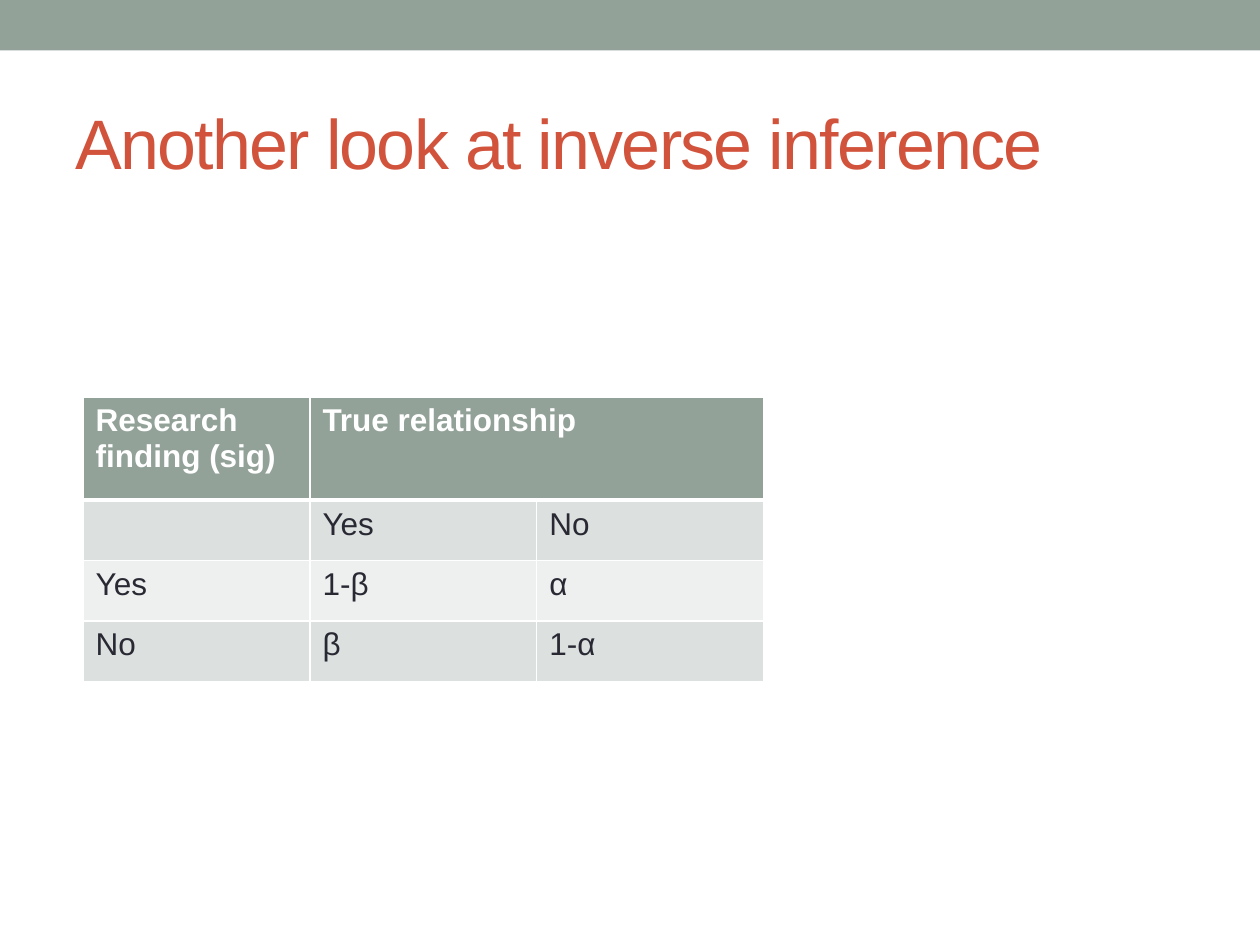
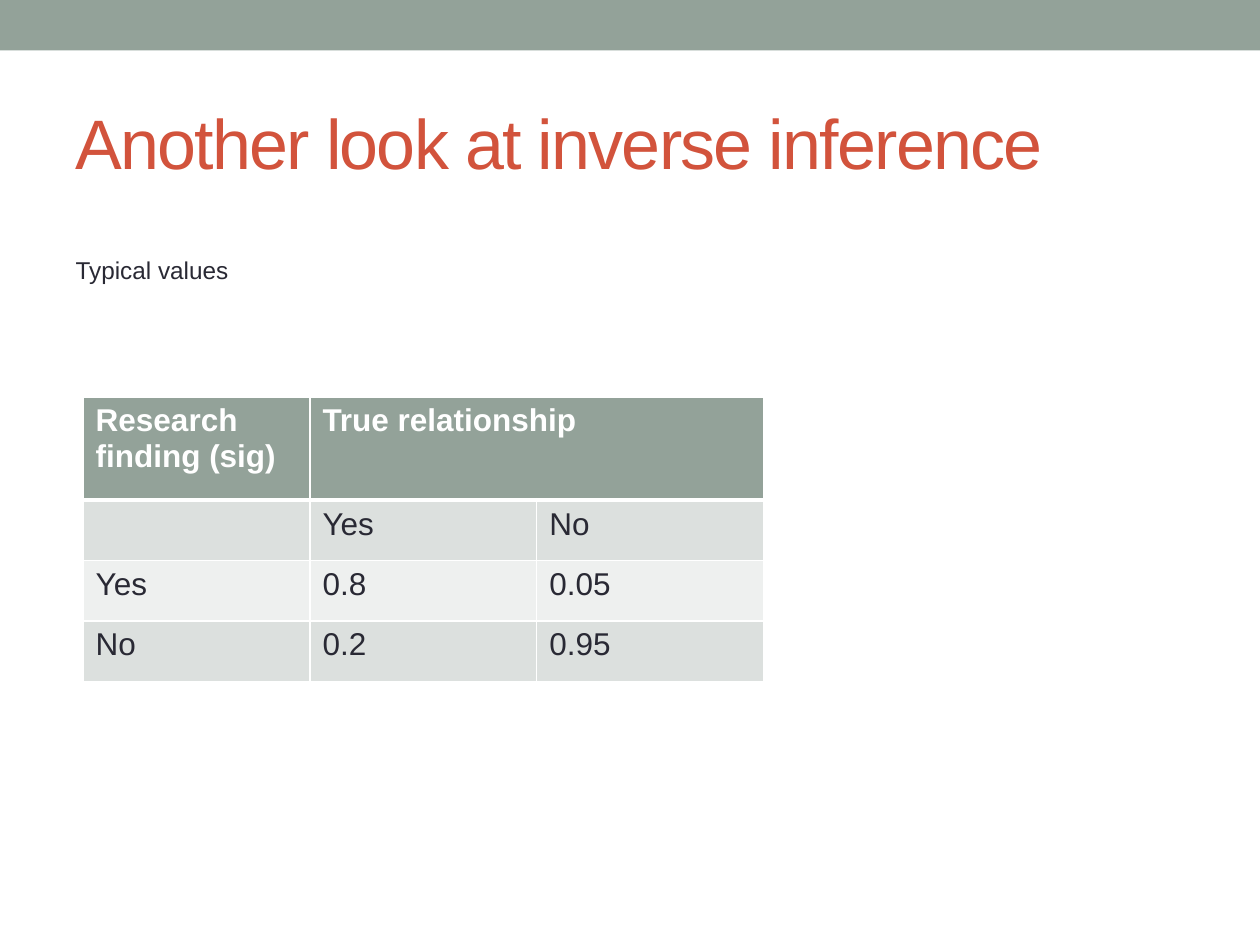
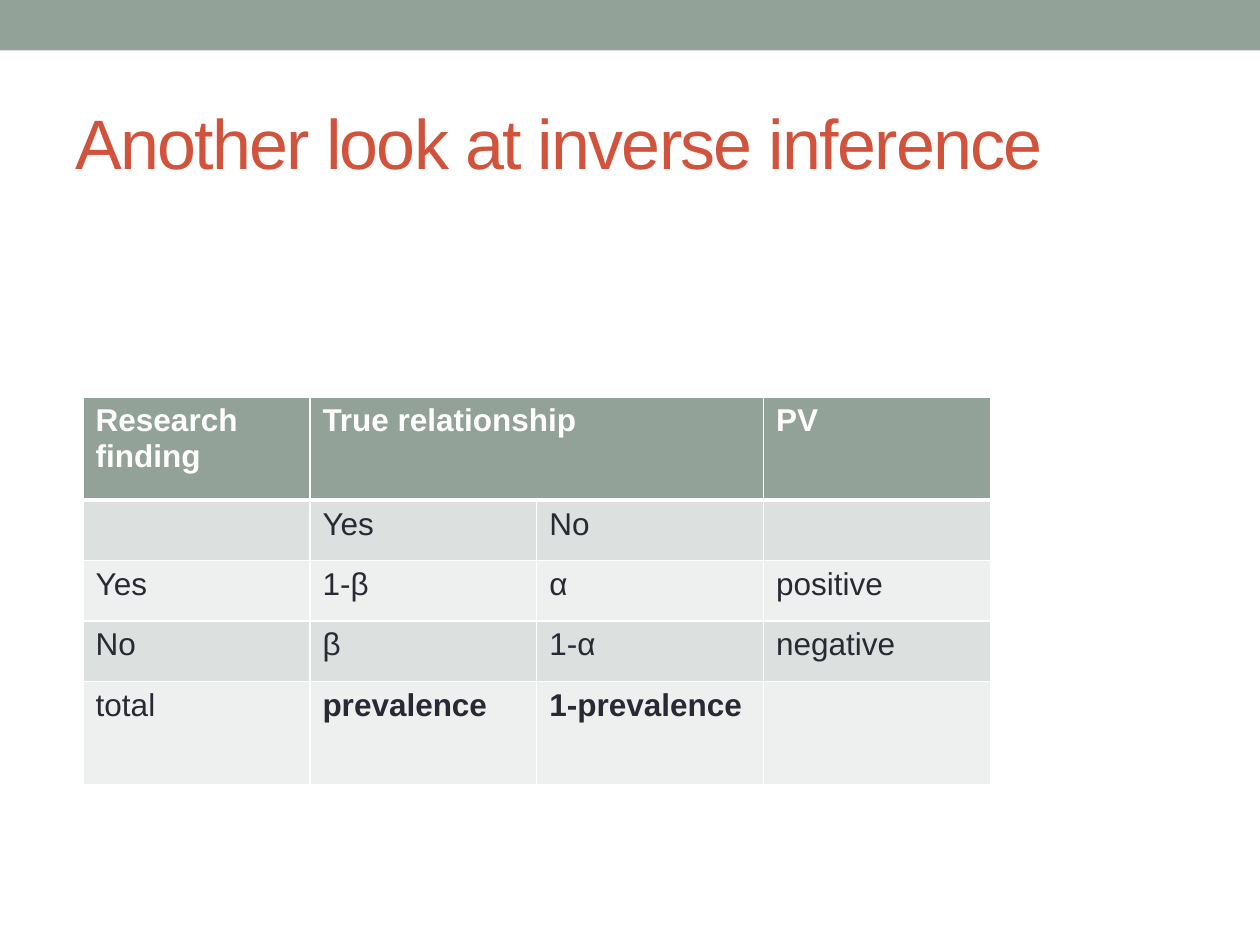
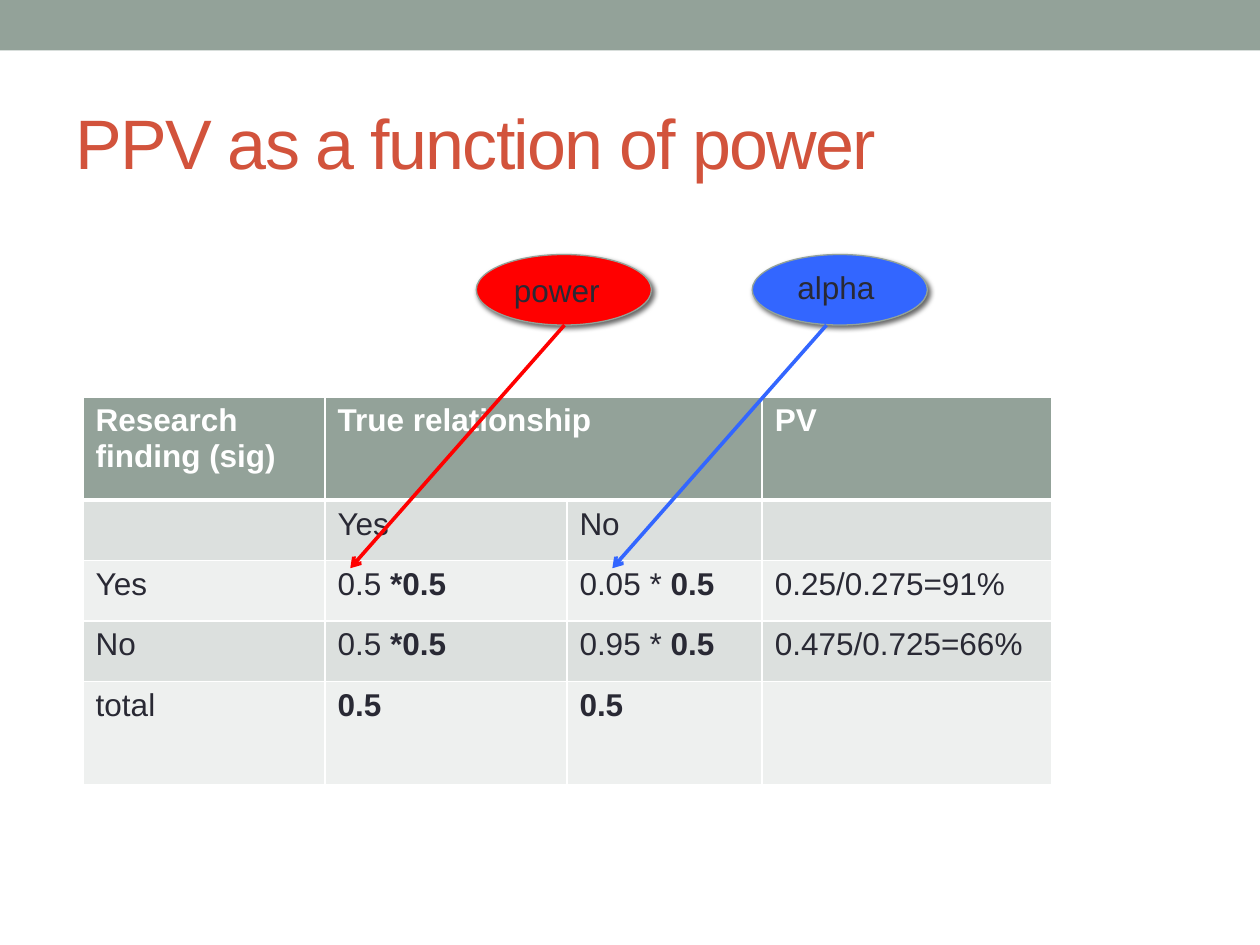
from lxml import etree
from pptx import Presentation
from pptx import util as u
from pptx.dml.color import RGBColor
from pptx.enum import shapes, text
from pptx.oxml.ns import qn

COLORS = {
    "sage": "93A299", "rust": "D2533C", "ink": "292934", "white": "FFFFFF",
    "band_dark": "DCE0DE", "band_light": "EEF0EF",
    "red": "FF0000", "blue": "3366FF", "black": "000000",
}
FONT = "Arial"
COLUMNS, ROWS = 20, 15
TITLE_ONLY, TITLE_AND_BODY = 5, 1
HEADER_ROW, DATA_ROW, TOTAL_ROW = 1.64, 0.96, 1.64
SIGNIFICANCE = "Research finding (sig)"
RELATION = "True relationship"


def rgb(name):
    return RGBColor.from_string(COLORS[name])


def sub(parent, tag, **attributes):
    return etree.SubElement(parent, qn(tag), {k: str(v) for k, v in attributes.items()})


def add_color(parent, name):
    return sub(parent, "a:srgbClr", val=COLORS[name])


def write(frame, content, size=18, color="ink", bold=False, align="LEFT",
          spacing=None, baseline=None):
    """Fill a text frame; each "|" in the content switches bold on or off."""
    paragraph = frame.paragraphs[0]
    paragraph.alignment = getattr(text.PP_ALIGN, align)
    for index, part in enumerate(content.split("|")):
        if not part:
            continue
        run = paragraph.add_run()
        run.text = part
        font = run.font
        font.name, font.size = FONT, u.Pt(size)
        font.bold = bold != (index % 2 == 1)
        font.color.rgb = rgb(color)
        properties = run._r.get_or_add_rPr()
        if spacing is not None:
            properties.set("spc", str(spacing * 100))
        if baseline is not None:
            properties.set("baseline", str(baseline * 1000))
    return paragraph


def set_borders(cell, **widths):
    """Draw white cell borders, given as L, R, T and B widths in points."""
    properties = cell._tc.get_or_add_tcPr()
    for side, width in widths.items():
        line = sub(properties, f"a:ln{side}", w=u.Pt(width))
        add_color(sub(line, "a:solidFill"), "white")


class Deck:
    """Holds the shared style and the slide being built; lengths are grid units."""

    def __init__(self):
        self.prs = Presentation()
        self.prs.slide_width, self.prs.slide_height = u.Inches(10), u.Inches(7.5)
        self.slide = None

    def x(self, columns):
        return round(self.prs.slide_width * columns / COLUMNS)

    def y(self, rows):
        return round(self.prs.slide_height * rows / ROWS)

    def box(self, left, top, width, height):
        return self.x(left), self.y(top), self.x(width), self.y(height)

    def place(self, shape, *area):
        shape.left, shape.top, shape.width, shape.height = self.box(*area)

    def add_slide(self, title, body=None):
        layout = TITLE_AND_BODY if body else TITLE_ONLY
        first = self.slide is None
        self.slide = self.prs.slides.add_slide(self.prs.slide_layouts[layout])
        if first:
            self.add_master_band()
        heading = self.slide.shapes.title
        self.place(heading, 1, 1.16, 18, 2.16)
        heading.text_frame.vertical_anchor = text.MSO_ANCHOR.MIDDLE
        write(heading.text_frame, title, size=40, color="rust", spacing=-1)
        if body:
            self.add_body(body)

    def add_master_band(self):
        """Draw the top band and move it to the master, behind every slide."""
        band = self.add_shape("RECTANGLE", "sage", 0, 0, COLUMNS, 0.8)
        self.prs.slide_master.shapes.element.insert(2, band.element)

    def add_body(self, content):
        body = self.slide.placeholders[1]
        self.place(body, 1, 3.5, 18, 10.66)
        paragraph = write(body.text_frame, content, size=24, baseline=-25)
        properties = paragraph._p.get_or_add_pPr()
        properties.set("marL", "0")
        properties.set("indent", "0")
        sub(properties, "a:buNone")

    def add_shape(self, kind, fill, *area):
        shape = self.slide.shapes.add_shape(
            getattr(shapes.MSO_SHAPE, kind), *self.box(*area))
        shape.fill.solid()
        shape.fill.fore_color.rgb = rgb(fill)
        shape.line.fill.background()
        shape.shadow.inherit = False
        return shape

    def add_bubble(self, fill, left, top):
        bubble = self.add_shape("OVAL", fill, left, top, 2.78, 1.12)
        bubble.line.color.rgb = rgb("sage")
        bubble.line.width = u.Pt(0.75)
        effects = bubble.element.spPr.find(qn("a:effectLst"))
        shadow = sub(effects, "a:outerShdw", blurRad=u.Pt(3), dist=u.Pt(2),
                     dir=45 * 60000, rotWithShape=0)
        sub(add_color(shadow, "black"), "a:alpha", val=60000)

    def add_label(self, content, *area):
        frame = self.slide.shapes.add_textbox(*self.box(*area)).text_frame
        frame.word_wrap = True
        write(frame, content)

    def add_arrow(self, color, tip, tail):
        arrow = self.slide.shapes.add_connector(
            shapes.MSO_CONNECTOR.STRAIGHT,
            self.x(tip[0]), self.y(tip[1]), self.x(tail[0]), self.y(tail[1]))
        arrow.line.color.rgb = rgb(color)
        arrow.line.width = u.Pt(2.08)
        sub(arrow.line._get_or_add_ln(), "a:headEnd", type="arrow")
        sub(arrow.element.spPr, "a:effectLst")

    def add_table(self, rows, widths):
        """Add a table whose "True relationship" heading spans two columns."""
        heights = [HEADER_ROW] + [DATA_ROW] * 3 + [TOTAL_ROW] * (len(rows) - 4)
        table = self.slide.shapes.add_table(
            len(rows), len(widths),
            *self.box(1.32, 6.3, sum(widths), sum(heights))).table
        for column, width in zip(table.columns, widths):
            column.width = self.x(width)
        for row, height in zip(table.rows, heights):
            row.height = self.y(height)
        table.cell(0, 1).merge(table.cell(0, 2))
        for r, row in enumerate(rows):
            header = r == 0
            fill = "sage" if header else ("band_light", "band_dark")[r % 2]
            for c, content in enumerate(row):
                cell = table.cell(r, c)
                set_borders(cell, L=1, R=1, T=3 if r == 1 else 1, B=3 if header else 1)
                cell.fill.solid()
                cell.fill.fore_color.rgb = rgb(fill)
                write(cell.text_frame, content, bold=header,
                      color="white" if header else "ink")


def main():
    deck = Deck()
    inverse = "Another look at inverse inference"

    deck.add_slide(inverse)
    deck.add_table([
        [SIGNIFICANCE, RELATION, ""],
        ["", "Yes", "No"],
        ["Yes", "1-β", "α"],
        ["No", "β", "1-α"],
    ], [3.6] * 3)

    deck.add_slide(inverse, body="Typical values")
    deck.add_table([
        [SIGNIFICANCE, RELATION, ""],
        ["", "Yes", "No"],
        ["Yes", "0.8", "0.05"],
        ["No", "0.2", "0.95"],
    ], [3.6] * 3)

    deck.add_slide(inverse)
    deck.add_table([
        ["Research finding", RELATION, "", "PV"],
        ["", "Yes", "No", ""],
        ["Yes", "1-β", "α", "positive"],
        ["No", "β", "1-α", "negative"],
        ["total", "|prevalence", "|1-prevalence", ""],
    ], [3.6] * 4)

    deck.add_slide("PPV as a function of power")
    deck.add_table([
        [SIGNIFICANCE, RELATION, "", "PV"],
        ["", "Yes", "No", ""],
        ["Yes", "0.5 |*0.5", "0.05 * |0.5", "0.25/0.275=91%"],
        ["No", "0.5 |*0.5", "0.95 * |0.5", "0.475/0.725=66%"],
        ["total", "|0.5", "|0.5", ""],
    ], [3.84, 3.84, 3.1, 4.6])
    for name, color, bubble_left, label, tip_x in [
        ("power", "red", 7.56, (7.96, 4.2, 1.96, 0.56), 5.56),
        ("alpha", "blue", 11.94, (12.46, 4.16, 1.96, 0.8), 9.72),
    ]:
        deck.add_bubble(color, bubble_left, 4.04)
        deck.add_arrow(color, tip=(tip_x, 9.02), tail=(tip_x + 3.4, 5.16))
        deck.add_label(name, *label)

    deck.prs.save("out.pptx")


if __name__ == "__main__":
    main()
